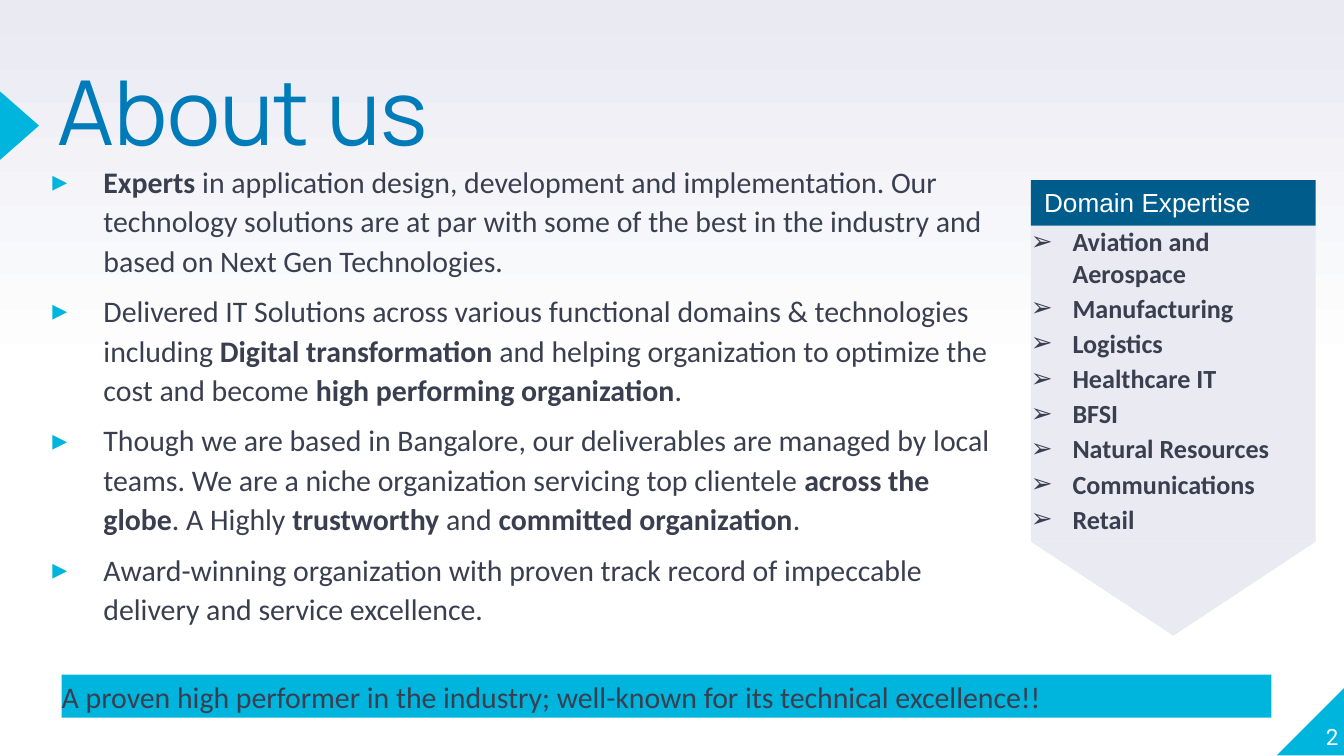
from copy import deepcopy
from dataclasses import dataclass
from typing import Optional

from pptx import Presentation
from pptx.dml.color import RGBColor as Rgb
from pptx.enum.shapes import MSO_SHAPE as Kind
from pptx.enum.text import MSO_ANCHOR as Anchor, MSO_AUTO_SIZE as Fit, PP_ALIGN as Align
from pptx.oxml.ns import qn
from pptx.oxml.xmlchemy import OxmlElement as Node
from pptx.util import Inches, Pt


@dataclass(frozen=True)
class Theme:
    cyan: str = "00B5DD"
    blue: str = "007BB9"
    navy: str = "005C8B"
    pale: str = "E9EAF2"
    ink: str = "3A3F50"
    white: str = "FFFFFF"
    title: int = 48
    body: int = 16
    small: int = 14
    page: int = 12


@dataclass(frozen=True)
class Box:
    left: float
    top: float
    width: float
    height: float

    def place(self, shape) -> None:
        shape.left, shape.top = Inches(self.left), Inches(self.top)
        shape.width, shape.height = Inches(self.width), Inches(self.height)


@dataclass(frozen=True)
class Run:
    text: str
    bold: bool = False


@dataclass(frozen=True)
class Style:
    size: int
    color: str
    font: str = "Calibri"
    line: float = 1.0
    before: int = 0
    align: Align = Align.LEFT
    bullet: str = ""
    tint: str = ""
    margin: float = 0
    hang: float = 0


@dataclass(frozen=True)
class Deco:
    kind: Kind
    box: Box
    color: str
    turn: int = 0
    flip: bool = False


T = Theme()
SIDE, WIDE = 7.67, 2.12  # left edge and width of the domain panel

DECOS = [
    Deco(Kind.RIGHT_TRIANGLE, Box(9.5, 5.11, 0.51, 0.51), T.cyan, flip=True),
    Deco(Kind.ISOSCELES_TRIANGLE, Box(-0.11, 0.79, 0.51, 0.29), T.cyan, turn=90),
    Deco(Kind.ISOSCELES_TRIANGLE, Box(SIDE, 4.03, WIDE, 0.7), T.pale, turn=180),
]

DOMAINS = ["Aviation and Aerospace", "Manufacturing", "Logistics", "Healthcare IT",
           "BFSI", "Natural Resources", "Communications", "Retail"]

POINTS = [
    [Run("Experts", True),
     Run(" in application design, development and implementation. Our technology "
         "solutions are at par with some of the best in the industry and based on "
         "Next Gen Technologies.")],
    [Run("Delivered IT Solutions across various functional domains & technologies including "),
     Run("Digital transformation ", True),
     Run("and helping organization to optimize the cost and become "),
     Run("high performing organization", True), Run(".")],
    [Run("Though we are based in Bangalore, our deliverables are managed by local teams. "
         "We are a niche organization servicing top clientele "),
     Run("across the globe", True), Run(". A Highly "), Run("trustworthy", True),
     Run(" and "), Run("committed organization", True), Run(".")],
    [Run("Award-winning organization with proven track record of impeccable delivery "
         "and service excellence.")],
]


def mark(para, style: Style) -> None:
    """Give a paragraph its hanging bullet."""
    props = para._p.get_or_add_pPr()
    props.set("marL", str(Inches(style.margin)))
    props.set("indent", str(-Inches(style.hang)))
    tint, rgb = Node("a:buClr"), Node("a:srgbClr")
    rgb.set("val", style.tint)
    tint.append(rgb)
    face = Node("a:buFont")
    face.set("typeface", style.font)
    sign = Node("a:buChar")
    sign.set("char", style.bullet)
    props.extend([tint, face, sign])


def write(shape, paras: list[list[Run]], style: Style,
          anchor: Anchor = Anchor.TOP, inset: tuple[float, float] = (0, 0)) -> None:
    frame = shape.text_frame
    frame.word_wrap, frame.auto_size = True, Fit.NONE
    frame.vertical_anchor = anchor
    frame.margin_left = frame.margin_right = Inches(inset[0])
    frame.margin_top = frame.margin_bottom = Inches(inset[1])
    for i, runs in enumerate(paras):
        para = frame.add_paragraph() if i else frame.paragraphs[0]
        para.alignment, para.line_spacing = style.align, style.line
        para.space_before = Pt(style.before)
        if style.bullet:
            mark(para, style)
        for item in runs:
            run = para.add_run()
            run.text = item.text
            font = run.font
            font.name, font.size, font.bold = style.font, Pt(style.size), item.bold
            font.color.rgb = Rgb.from_string(style.color)


def draw(slide, deco: Deco):
    shape = slide.shapes.add_shape(deco.kind, 0, 0, 0, 0)
    deco.box.place(shape)
    shape.shadow.inherit = False
    shape.fill.solid()
    shape.fill.fore_color.rgb = Rgb.from_string(deco.color)
    shape.line.fill.background()
    shape.rotation = deco.turn
    if deco.flip:
        shape._element.spPr.find(qn("a:xfrm")).set("flipH", "1")
    return shape


def panel(slide, box: Box, fill: Optional[str] = None):
    """Add a filled rectangle, or a plain text box when there is no fill."""
    if fill:
        return draw(slide, Deco(Kind.RECTANGLE, box, fill))
    shape = slide.shapes.add_textbox(0, 0, 0, 0)
    box.place(shape)
    return shape


def shade(slide) -> None:
    """Fade the background from white up to the pale tint at the top."""
    fill = slide.background.fill
    fill.gradient()
    fill.gradient_angle = 90
    stops = slide._element.find(".//" + qn("a:gsLst"))
    stops.insert(0, deepcopy(stops[0]))
    tones = [(0, T.white), (0.5, T.white), (1, T.pale)]
    for stop, (place, color) in zip(fill.gradient_stops, tones):
        stop.position = place
        stop.color.rgb = Rgb.from_string(color)


def main() -> None:
    deck = Presentation()
    deck.slide_width = Inches(10)
    deck.slide_height = deck.slide_width * 9 // 16
    slide = deck.slides.add_slide(deck.slide_layouts[5])
    shade(slide)
    for deco in DECOS:
        draw(slide, deco)

    title = slide.shapes.title
    Box(0.43, 0.57, 6.17, 0.82).place(title)
    write(title, [[Run("About us")]], Style(T.title, T.blue, "Manrope", line=0.8))

    write(panel(slide, Box(SIDE, 1.68, WIDE, 2.35), T.pale),
          [[Run(name, True)] for name in DOMAINS],
          Style(T.small, T.ink, before=2, bullet="➢", tint=T.ink, margin=0.31, hang=0.31))
    write(panel(slide, Box(SIDE, 1.34, WIDE, 0.34), T.navy),
          [[Run("Domain Expertise")]], Style(T.small, T.white, "Arial"), inset=(0.1, 0.05))

    write(panel(slide, Box(0.27, 1.19, 7.19, 3.82)), POINTS,
          Style(T.body, T.ink, line=1.1, before=6, bullet="▸", tint=T.cyan,
                margin=0.5, hang=0.38))
    write(panel(slide, Box(0.46, 5.02, 9, 0.32), T.cyan),
          [[Run("A proven high performer in the industry; well-known for its "
                "technical excellence!!")]], Style(T.body, T.ink, line=1.1))
    write(panel(slide, Box(9.46, 5.07, 0.5, 0.51)), [[Run("2")]],
          Style(T.page, T.white, "Roboto", align=Align.RIGHT), Anchor.BOTTOM)
    deck.save("out.pptx")


if __name__ == "__main__":
    main()
